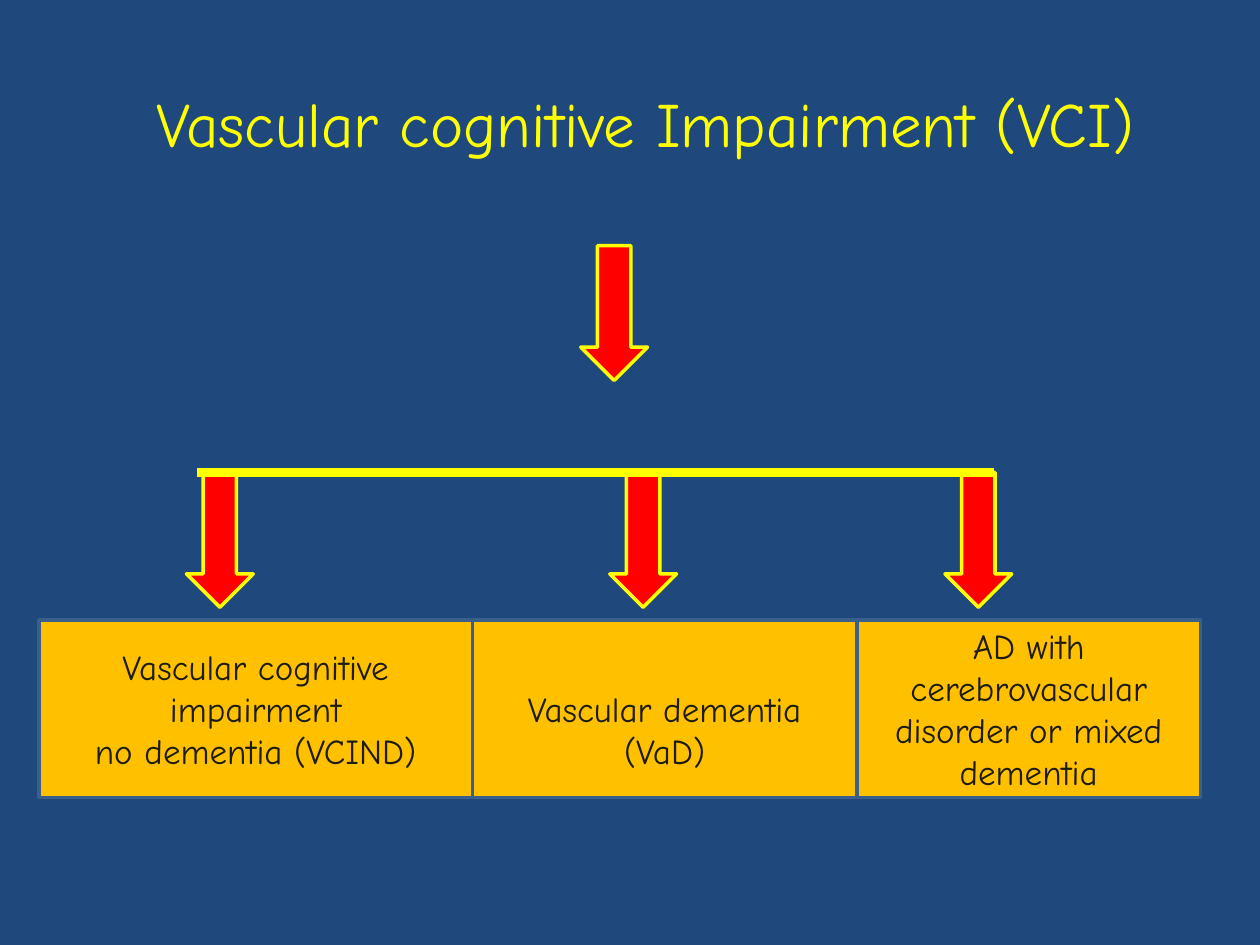
from pptx import Presentation
from pptx.dml.color import RGBColor as RGB
from pptx.enum.shapes import MSO_CONNECTOR as LINK, MSO_SHAPE as SHAPE
from pptx.enum.text import MSO_ANCHOR as ANCHOR, PP_ALIGN as ALIGN
from pptx.oxml.ns import qn
from pptx.util import Inches, Pt
from lxml.etree import SubElement

COLS, ROWS = 100, 75
CELL = Inches(10) // COLS
FONT = "Comic Neue"
NAVY, GOLD, RED, YELLOW = "1F497D", "FFC000", "FF0000", "FFFF00"
EDGE, INK = "3A5F8C", "1E1C11"


def grid(*cells):
    return [round(CELL * cell) for cell in cells]


def paint(target, color):
    target.solid()
    target.fore_color.rgb = RGB.from_string(color)


def write(shape, text, size=20, color=INK, top=0.5, bottom=0.5):
    frame = shape.text_frame
    frame.word_wrap = True
    frame.vertical_anchor = ANCHOR.MIDDLE
    frame.margin_top, frame.margin_bottom = grid(top, bottom)
    frame.text = text
    for para in frame.paragraphs:
        para.alignment = ALIGN.CENTER
        for run in para.runs:
            run.font.name = FONT
            run.font.size = Pt(size)
            paint(run.font.fill, color)


def block(slide, kind, area, fill, edge):
    shape = slide.shapes.add_shape(kind, *grid(*area))
    shape.shadow.inherit = False
    paint(shape.fill, fill)
    paint(shape.line.fill, edge)
    shape.line.width = Pt(2)
    return shape


def arrow(slide, left, top):
    block(slide, SHAPE.DOWN_ARROW, (left, top, 5.3, 10.7), RED, YELLOW)


def bar(slide, left, right, row):
    line = slide.shapes.add_connector(LINK.STRAIGHT, *grid(left, row, right, row))
    paint(line.line.fill, YELLOW)
    line.line.width = Pt(5.5)
    SubElement(line._element.spPr, qn("a:effectLst"))


def main():
    deck = Presentation()
    deck.slide_width, deck.slide_height = grid(COLS, ROWS)
    slide = deck.slides.add_slide(deck.slide_layouts[6])
    paint(slide.background.fill, NAVY)

    title = slide.shapes.add_textbox(*grid(6.2, 6.2, 90, 12.5))
    write(title, "Vascular cognitive Impairment (VCI)", size=36, color=YELLOW, bottom=6)

    left = 3.1
    for width, top, text in (
        (34.4, 0.5, "Vascular cognitive\nimpairment\nno dementia (VCIND)"),
        (30.5, 3.8, "Vascular dementia\v(VaD)"),
        (27.3, 0.5, "AD with cerebrovascular disorder or mixed dementia"),
    ):
        box = block(slide, SHAPE.RECTANGLE, (left, 49.2, width, 14.1), GOLD, EDGE)
        write(box, text, top=top)
        left += width

    for col in (14.8, 48.4, 75):
        arrow(slide, col, 37.5)
    bar(slide, 15.6, 78.9, 37.5)
    arrow(slide, 46.1, 19.5)

    deck.save("out.pptx")


if __name__ == "__main__":
    main()
